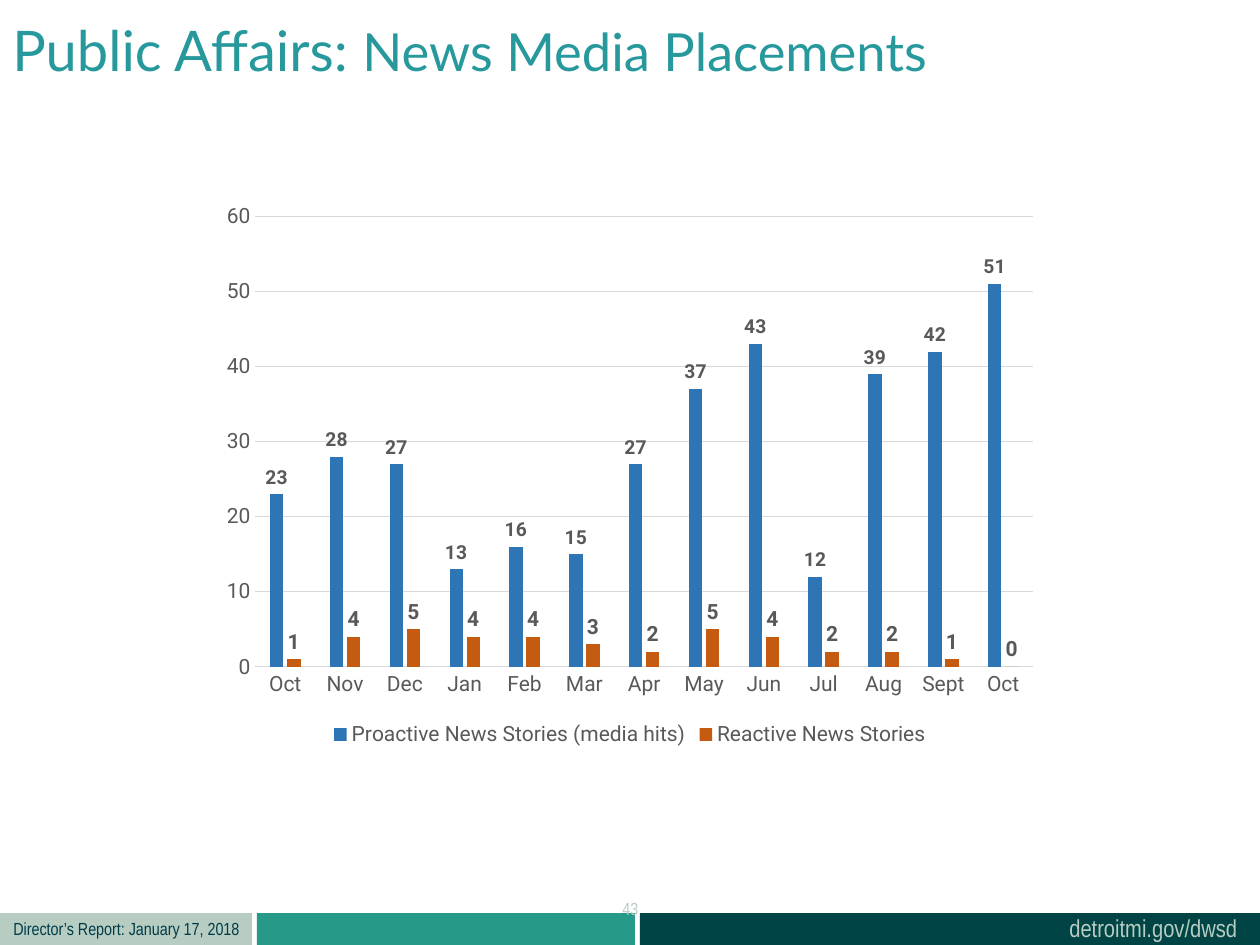
from pptx import Presentation
from pptx.chart.data import CategoryChartData
from pptx.dml.color import RGBColor
from pptx.enum.chart import XL_CHART_TYPE, XL_LABEL_POSITION, XL_LEGEND_POSITION, XL_TICK_MARK
from pptx.enum.shapes import MSO_SHAPE
from pptx.util import Pt

COLUMN = XL_CHART_TYPE.COLUMN_CLUSTERED
ABOVE = XL_LABEL_POSITION.OUTSIDE_END
BOTTOM = XL_LEGEND_POSITION.BOTTOM
NO_TICK = XL_TICK_MARK.NONE
RECT = MSO_SHAPE.RECTANGLE

PX = 914400 // 126
COLORS = {
    "title": "27999D", "green": "279989", "dark": "004445", "sage": "B7CDC2",
    "navy": "003B49", "gray": "595959", "grid": "D9D9D9",
    "blue": "2E75B6", "orange": "C55A11",
}

# Content
TITLE = [("Public Affairs: ", 32), ("News Media Placements", 30)]
MONTHS = ["Oct", "Nov", "Dec", "Jan", "Feb", "Mar", "Apr",
          "May", "Jun", "Jul", "Aug", "Sept", "Oct"]
# name, values, color, label size
SERIES = [
    ("Proactive News Stories (media hits)",
     [23, 28, 27, 13, 16, 15, 27, 37, 43, 12, 39, 42, 51], "blue", 11),
    ("Reactive News Stories",
     [1, 4, 5, 4, 4, 3, 2, 5, 4, 2, 2, 1, 0], "orange", 12),
]
# left, width, color
BANDS = [(257, 378, "green"), (640, 630, "dark"), (0, 252, "sage")]
BAND_TOP, BAND_HIGH = 913, 32
# text, box, size, color
NOTES = [
    ("detroitmi.gov/dwsd", (1057, 907, 195, 43), 14, "sage"),
    ("Director’s Report: January 17, 2018", (1, 912, 252, 34), 10, "navy"),
    ("43", (610, 892, 42, 34), 10, "sage"),
]


def color(name):
    return RGBColor.from_string(COLORS[name])


def place(*box):
    return [n * PX for n in box]


def style(font, size, hue, face, bold=False):
    font.size = Pt(size)
    font.name = face
    font.bold = bold
    font.color.rgb = color(hue)


def add_text(slide, box, runs, hue, face, wrap):
    frame = slide.shapes.add_textbox(*place(*box)).text_frame
    frame.word_wrap = wrap
    para = frame.paragraphs[0]
    style(para.font, runs[0][1], hue, face)
    for text, size in runs:
        run = para.add_run()
        run.text = text
        run.font.size = Pt(size)


def add_chart(slide):
    data = CategoryChartData()
    data.categories = MONTHS
    for name, vals, _, _ in SERIES:
        data.add_series(name, vals)
    chart = slide.shapes.add_chart(COLUMN, *place(210, 193, 840, 559), data).chart
    chart.has_title = False
    style(chart.font, 12, "gray", "Roboto")

    # Legend
    chart.has_legend = True
    chart.legend.position = BOTTOM
    chart.legend.include_in_layout = False
    style(chart.legend.font, 12, "gray", "Roboto")

    # Axes
    cat, val = chart.category_axis, chart.value_axis
    for axis in (cat, val):
        axis.major_tick_mark = axis.minor_tick_mark = NO_TICK
        style(axis.tick_labels.font, 12, "gray", "Roboto")
    val.minimum_scale, val.maximum_scale, val.major_unit = 0, 60, 10
    val.format.line.fill.background()
    for line in (cat.format.line, val.major_gridlines.format.line):
        line.color.rgb = color("grid")
        line.width = Pt(0.75)

    # Columns
    plot = chart.plots[0]
    plot.gap_width, plot.overlap = 219, -27
    plot.vary_by_categories = False
    for series, (_, _, hue, size) in zip(plot.series, SERIES):
        series.format.fill.solid()
        series.format.fill.fore_color.rgb = color(hue)
        labels = series.data_labels
        labels.show_value = True
        labels.position = ABOVE
        style(labels.font, size, "gray", "Roboto", True)


def main():
    deck = Presentation()
    deck.slide_width, deck.slide_height = place(1260, 945)
    slide = deck.slides.add_slide(deck.slide_layouts[6])

    # Footer bands
    for left, width, hue in BANDS:
        band = slide.shapes.add_shape(RECT, *place(left, BAND_TOP, width, BAND_HIGH))
        band.shadow.inherit = False
        band.fill.solid()
        band.fill.fore_color.rgb = color(hue)
        band.line.fill.background()

    add_text(slide, (0, 9, 1260, 81), TITLE, "title", "Lato", True)
    add_chart(slide)

    # Footer text
    for text, box, size, hue in NOTES:
        add_text(slide, box, [(text, size)], hue, "Arial Narrow", False)

    deck.save("out.pptx")


if __name__ == "__main__":
    main()
